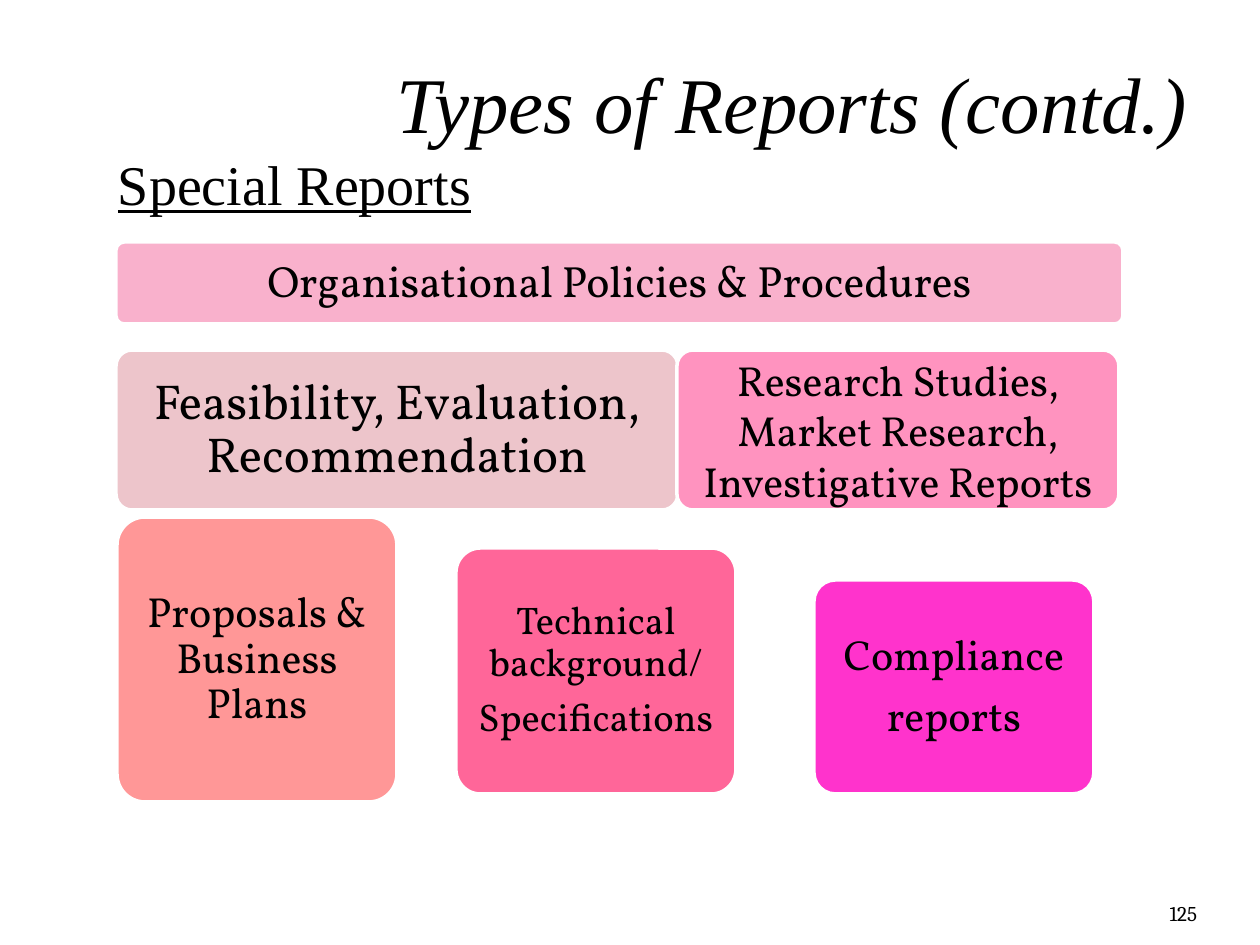
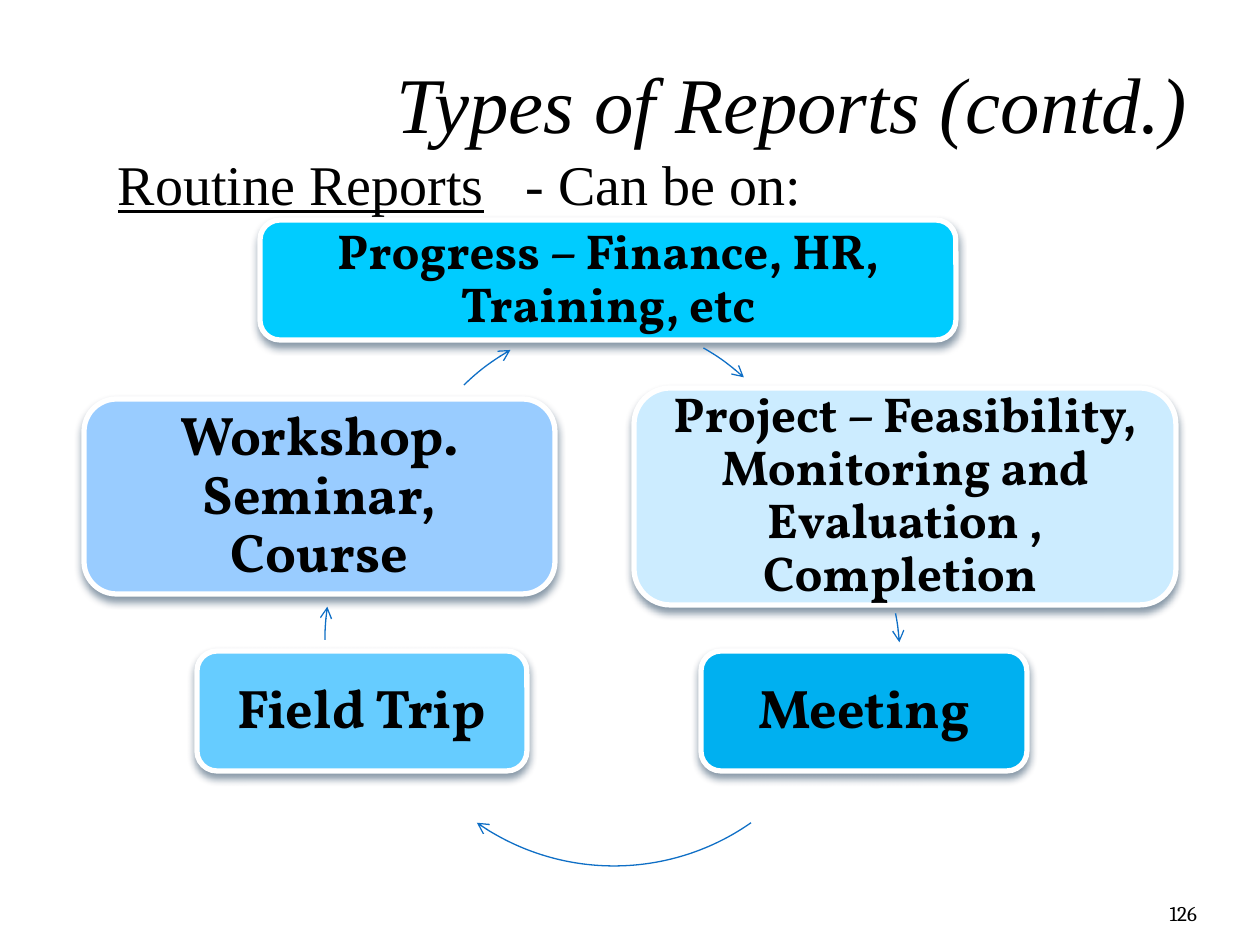
from dataclasses import dataclass

from lxml import etree
from pptx import Presentation
from pptx.dml.color import RGBColor
from pptx.enum.shapes import MSO_SHAPE
from pptx.enum.text import MSO_ANCHOR, PP_ALIGN
from pptx.oxml.ns import qn
from pptx.util import Emu, Pt

ROUNDED = MSO_SHAPE.ROUNDED_RECTANGLE
ARC = MSO_SHAPE.ARC
LEFT, CENTER, RIGHT = PP_ALIGN.LEFT, PP_ALIGN.CENTER, PP_ALIGN.RIGHT
TOP, MIDDLE, BOTTOM = MSO_ANCHOR.TOP, MSO_ANCHOR.MIDDLE, MSO_ANCHOR.BOTTOM

PX_PER_INCH = 126
SLIDE_SIZE = (1260, 945)
TITLE_BOX = (116, 73, 1071, 76)
HEADING_BOX = (105, 136, 1071, 587)
NUMBER_BOX = (1092, 876, 105, 50)
HEADING_TAB = 408


@dataclass(frozen=True)
class Theme:
    text: str = "000000"
    border: str = "FFFFFF"
    arrow: str = "0F6FC6"
    shadow: str = "042747"
    serif: str = "Times New Roman"
    card_font: str = "Vollkorn"
    number_font: str = "Cambria"
    title_size: int = 45
    heading_size: int = 32
    number_size: int = 12


THEME = Theme()

# Box relative to the diagram, fill, type size, line spacing, paragraphs
SPECIAL_CARDS = [
    ((0, 0, 1007, 82), "F9B1CC", 25, 0.9, ["Organisational Policies & Procedures"]),
    ((0, 108, 562, 160), "EDC5CB", 28, 0.9, ["Feasibility, Evaluation, Recommendation"]),
    ((1, 275, 280, 285), "FF9797", 24, 0.9, ["Proposals & Business Plans"]),
    ((340, 306, 280, 246), "FF6699", 22, 0.9,
     ["Technical background/", "Specifications"]),
    ((561, 108, 442, 160), "FF93BF", 24, 1.0,
     ["Research Studies, Market Research,", "Investigative Reports"]),
    ((698, 338, 280, 214), "FF33CC", 24, 0.9, ["Compliance", "reports"]),
]
ROUTINE_CARDS = [
    ((176, 0, 696, 120), "00CCFF", 28, 0.9, ["Progress – Finance, HR, Training, etc"]),
    ((550, 168, 542, 217), "CCECFF", 28, 0.9,
     ["Project – Feasibility, Monitoring and Evaluation , Completion "]),
    ((617, 431, 326, 120), "00B0F0", 31, 0.9, ["Meeting"]),
    ((113, 431, 330, 120), "66CCFF", 31, 0.9, ["Field Trip"]),
    ((0, 179, 471, 195), "99CCFF", 31, 0.9, ["Workshop. Seminar, Course"]),
]
# Left and top of each arrow's circle, then its start and end in degrees
CYCLE_DIAMETER = 478
CYCLE_ARROWS = [
    (261, 96, 300, 312),
    (338, 200, 349, 356),
    (291, 168, 55, 125),
    (241, 181, 180, 188),
    (307, 98, 226, 240),
]


def px(length):
    return Emu(round(length * 914400 / PX_PER_INCH))


def place(box, origin=(0, 0)):
    """Turn a pixel box, relative to origin, into slide lengths."""
    left, top, width, height = box
    return [px(v) for v in (origin[0] + left, origin[1] + top, width, height)]


def set_attributes(target, values):
    for name, value in values.items():
        setattr(target, name, value)


def set_frame(frame, anchor, insets):
    sides = ("margin_left", "margin_top", "margin_right", "margin_bottom")
    set_attributes(frame, {"word_wrap": True, "vertical_anchor": anchor,
                           **{side: px(v) for side, v in zip(sides, insets)}})


def add_run(paragraph, text, font_name, size, **styles):
    run = paragraph.add_run()
    run.text = text
    set_attributes(run.font, {"name": font_name, "size": Pt(size), **styles})
    run.font.color.rgb = RGBColor.from_string(THEME.text)


def add_text(slide, box, anchor, insets, alignment):
    """Add a text box and return its first paragraph."""
    frame = slide.shapes.add_textbox(*place(box)).text_frame
    set_frame(frame, anchor, insets)
    paragraph = frame.paragraphs[0]
    paragraph.alignment = alignment
    return paragraph


def add_title(slide, box):
    paragraph = add_text(slide, box, BOTTOM, (0, 6, 0, 0), RIGHT)
    add_run(paragraph, "Types of Reports (contd.)", THEME.serif,
            THEME.title_size, italic=True)


def add_heading(slide, box, heading, remark):
    paragraph = add_text(slide, box, TOP, (13, 13, 13, 6), LEFT)
    add_run(paragraph, heading, THEME.serif, THEME.heading_size, underline=True)
    if remark:
        tabs = etree.SubElement(paragraph._p.get_or_add_pPr(), qn("a:tabLst"))
        etree.SubElement(tabs, qn("a:tab"), pos=str(px(HEADING_TAB)), algn="l")
        add_run(paragraph, "\t" + remark, THEME.serif, THEME.heading_size)


def add_number(slide, box, number):
    paragraph = add_text(slide, box, BOTTOM, (0, 0, 0, 0), RIGHT)
    add_run(paragraph, str(number), THEME.number_font, THEME.number_size)


def add_soft_shadow(shape):
    effects = shape._element.spPr.find(qn("a:effectLst"))
    shadow = etree.SubElement(effects, qn("a:outerShdw"), blurRad=str(Pt(4.5)),
                              dist=str(Pt(3)), dir="5400000", rotWithShape="0")
    color = etree.SubElement(shadow, qn("a:srgbClr"), val=THEME.shadow)
    etree.SubElement(color, qn("a:alpha"), val="48000")


def add_card(slide, origin, card, border, bold=False, corner=None):
    box, fill, size, spacing, texts = card
    shape = slide.shapes.add_shape(ROUNDED, *place(box, origin))
    if corner:
        shape.adjustments[0] = corner
    shape.fill.solid()
    shape.fill.fore_color.rgb = RGBColor.from_string(fill)
    shape.line.color.rgb = RGBColor.from_string(THEME.border)
    shape.line.width = Pt(border)
    shape.shadow.inherit = False
    frame = shape.text_frame
    set_frame(frame, MIDDLE, [round(size * 0.53)] * 4)
    for index, text in enumerate(texts):
        paragraph = frame.add_paragraph() if index else frame.paragraphs[0]
        set_attributes(paragraph, {"alignment": CENTER, "line_spacing": spacing})
        if spacing < 1 and index < len(texts) - 1:
            paragraph.space_after = Pt(round(size * 0.37))
        add_run(paragraph, text, THEME.card_font, size, bold=bold)
    return shape


def add_cycle_arrow(slide, origin, left, top, start, end):
    box = (left, top, CYCLE_DIAMETER, CYCLE_DIAMETER)
    arrow = slide.shapes.add_shape(ARC, *place(box, origin))
    for index, degrees in enumerate((start, end)):
        arrow.adjustments[index] = degrees * 0.6
    arrow.fill.background()
    arrow.line.color.rgb = RGBColor.from_string(THEME.arrow)
    arrow.line.width = Pt(0.75)
    arrow.shadow.inherit = False
    etree.SubElement(arrow.line._get_or_add_ln(), qn("a:tailEnd"), type="arrow")


def add_special_reports(slide, origin):
    for card in SPECIAL_CARDS:
        add_card(slide, origin, card, border=2, corner=0.1)


def add_routine_reports(slide, origin):
    for card, arrow in zip(ROUTINE_CARDS, CYCLE_ARROWS):
        add_soft_shadow(add_card(slide, origin, card, border=3, bold=True))
        add_cycle_arrow(slide, origin, *arrow)


def add_report_slide(presentation, number, heading, remark=""):
    """Add a slide with the shared title, heading and number."""
    slide = presentation.slides.add_slide(presentation.slide_layouts[6])
    add_title(slide, TITLE_BOX)
    add_heading(slide, HEADING_BOX, heading, remark)
    add_number(slide, NUMBER_BOX, number)
    return slide


def main():
    presentation = Presentation()
    presentation.slide_width, presentation.slide_height = map(px, SLIDE_SIZE)
    special = add_report_slide(presentation, 125, "Special Reports")
    add_special_reports(special, (116, 242))
    routine = add_report_slide(presentation, 126, "Routine Reports", "- Can be on:")
    add_routine_reports(routine, (84, 220))
    presentation.save("out.pptx")


if __name__ == "__main__":
    main()
